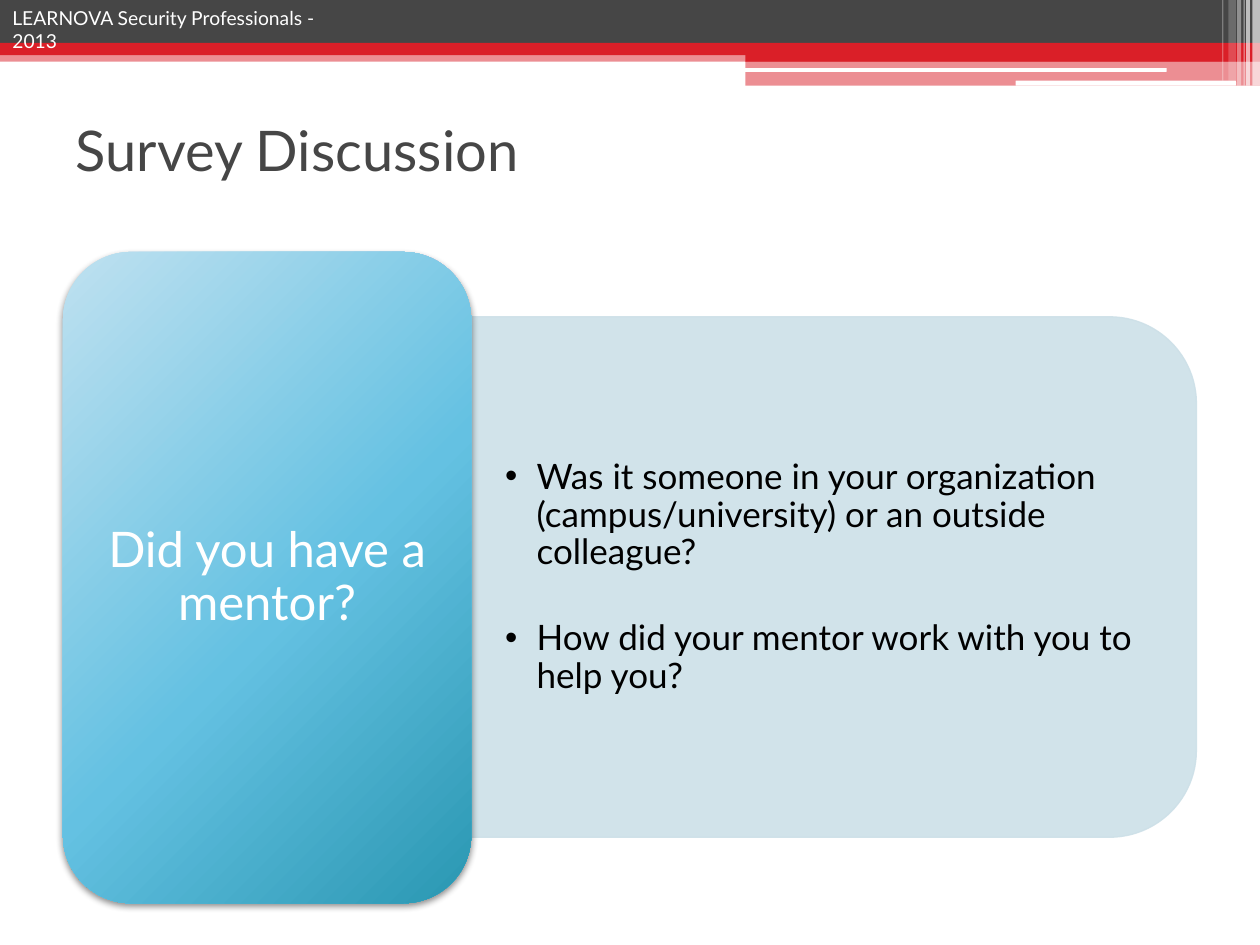
from lxml.etree import SubElement
from pptx import Presentation
from pptx.dml.color import RGBColor
from pptx.enum.shapes import MSO_SHAPE
from pptx.enum.text import MSO_ANCHOR, PP_ALIGN
from pptx.oxml import parse_xml
from pptx.oxml.ns import nsdecls, qn
from pptx.util import Pt

WHITE = RGBColor(0xFF, 0xFF, 0xFF)
BLACK = RGBColor(0x00, 0x00, 0x00)
CHARCOAL = RGBColor(0x46, 0x46, 0x46)
RED = RGBColor(0xDA, 0x1F, 0x28)
PALE_BLUE = RGBColor(0xCD, 0xE0, 0xE8)
SKY = RGBColor(0xBF, 0xE1, 0xF0)
AZURE = RGBColor(0x64, 0xC1, 0xE2)
TEAL = RGBColor(0x2A, 0x97, 0xB2)

QUESTION = "Did you have a mentor?"
PROMPTS = [
    "Was it someone in your organization (campus/university) or an outside colleague?",
    "How did your mentor work with you to help you?",
]


def paint(fill, color, opacity):
    """Fill with a solid colour; opacity is in percent."""
    fill.solid()
    fill.fore_color.rgb = color
    if opacity < 100:
        for srgb in fill._xPr.iterfind(f"{qn('a:solidFill')}/{qn('a:srgbClr')}"):
            SubElement(srgb, qn("a:alpha"), val=str(opacity * 1000))


class SlideBuilder:
    font = "Lato"

    def __init__(self, slide):
        self.slide = slide

    def shape(self, kind, box, color, opacity=100, corner=None, outlined=False):
        shape = self.slide.shapes.add_shape(kind, *map(Pt, box))
        shape.shadow.inherit = False
        paint(shape.fill, color, opacity)
        if corner is not None:
            shape.adjustments[0] = corner
        if outlined:
            shape.line.width = Pt(0.75)
            paint(shape.line.fill, color, opacity)
        else:
            shape.line.fill.background()
        return shape

    def bar(self, box, color, opacity=100):
        return self.shape(MSO_SHAPE.RECTANGLE, box, color, opacity)

    def gradient_card(self, box, stops):
        """Rounded card with a diagonal gradient and a soft shadow below."""
        card = self.shape(MSO_SHAPE.ROUNDED_RECTANGLE, box, stops[0][1])
        properties = card._element.spPr
        stop_xml = "".join(
            f'<a:gs pos="{position * 1000}"><a:srgbClr val="{color}"/></a:gs>'
            for position, color in stops
        )
        gradient = parse_xml(
            f'<a:gradFill {nsdecls("a")} rotWithShape="1"><a:gsLst>{stop_xml}</a:gsLst>'
            '<a:lin ang="2700000" scaled="0"/></a:gradFill>'
        )
        properties.replace(properties.find(qn("a:solidFill")), gradient)
        shadow = SubElement(
            properties.find(qn("a:effectLst")), qn("a:outerShdw"),
            blurRad=str(Pt(4)), dist=str(Pt(2)), dir="5400000", rotWithShape="0",
        )
        black = SubElement(shadow, qn("a:srgbClr"), val=str(BLACK))
        SubElement(black, qn("a:alpha"), val="45000")

    def run(self, paragraph, text, size, color):
        run = paragraph.add_run()
        run.text = text
        run.font.name = self.font
        run.font.size = Pt(size)
        run.font.color.rgb = color

    def title(self, text, box):
        title = self.slide.shapes.title
        title.left, title.top, title.width, title.height = map(Pt, box)
        title.text_frame.vertical_anchor = MSO_ANCHOR.MIDDLE
        paragraph = title.text_frame.paragraphs[0]
        paragraph.alignment = PP_ALIGN.LEFT
        self.run(paragraph, text, 32, CHARCOAL)

    def text(self, box, lines, size, color, insets=(7.2, 3.6), spacing=1.0, gap=0,
             anchor=MSO_ANCHOR.MIDDLE, align=PP_ALIGN.LEFT, bulleted=False):
        frame = self.slide.shapes.add_textbox(*map(Pt, box)).text_frame
        frame.word_wrap = True
        frame.vertical_anchor = anchor
        frame.margin_left = frame.margin_right = Pt(insets[0])
        frame.margin_top = frame.margin_bottom = Pt(insets[1])
        for index, line in enumerate(lines):
            paragraph = frame.add_paragraph() if index else frame.paragraphs[0]
            paragraph.alignment = align
            paragraph.line_spacing = spacing
            paragraph.space_before = Pt(gap if index else 0)
            if bulleted:
                properties = paragraph._p.get_or_add_pPr()
                properties.set("marL", str(Pt(18)))
                properties.set("indent", str(-Pt(18)))
                SubElement(properties, qn("a:buFont"), typeface="Arial")
                SubElement(properties, qn("a:buChar"), char="•")
            self.run(paragraph, line, size, color)


def draw_banner(builder):
    builder.bar((0, 28.8, 720, 6.5), RED, 50)
    builder.bar((0, 0, 720, 24.5), CHARCOAL)
    builder.bar((0, 24.5, 720, 7), RED)
    builder.bar((426, 28, 294, 7.2), RED)
    builder.bar((426, 34.8, 294, 14.1), RED, 50)
    for box in ((425.5, 38.9, 241.2, 2.2), (580.3, 46.1, 126, 2.9)):
        builder.shape(MSO_SHAPE.ROUNDED_RECTANGLE, box, WHITE, corner=0.167)
    stripes = [
        (715.7, 4.3, 49, 65), (712.1, 2.2, 49, 65), (710.6, 0.7, 49, 60),
        (707, 2.2, 49, 40), (702, 4.3, 46.1, 20), (698.4, 0.7, 46.1, 30),
    ]
    for left, width, height, opacity in stripes:
        builder.bar((left, 0, width, height), WHITE, opacity)
    builder.text((0, 0, 211, 20.9), ["LEARNOVA Security Professionals - 2013"],
                 11, WHITE, anchor=MSO_ANCHOR.TOP)


def draw_discussion(builder):
    panel = builder.shape(MSO_SHAPE.ROUND_2_SAME_RECTANGLE, (327.6, 122.4, 297.4, 414.7),
                          PALE_BLUE, 90, outlined=True)
    panel.rotation = 90
    builder.text((269.3, 195.8, 400.3, 268.6), PROMPTS, 20, BLACK, insets=(19.4, 10.1),
                 spacing=0.9, gap=27.5, bulleted=True)
    builder.gradient_card((36, 144, 233.3, 372.2), [(0, SKY), (55, AZURE), (100, TEAL)])
    builder.text((47.5, 155.5, 210.2, 349.2), [QUESTION], 28, WHITE, insets=(8.6, 4.3),
                 spacing=0.9, align=PP_ALIGN.CENTER)


def main():
    presentation = Presentation()
    presentation.slide_width, presentation.slide_height = Pt(720), Pt(540)
    title_only = presentation.slide_layouts[5]
    builder = SlideBuilder(presentation.slides.add_slide(title_only))
    draw_banner(builder)
    builder.title("Survey Discussion", (36, 43.2, 648, 84.2))
    draw_discussion(builder)
    presentation.save("out.pptx")


if __name__ == "__main__":
    main()
